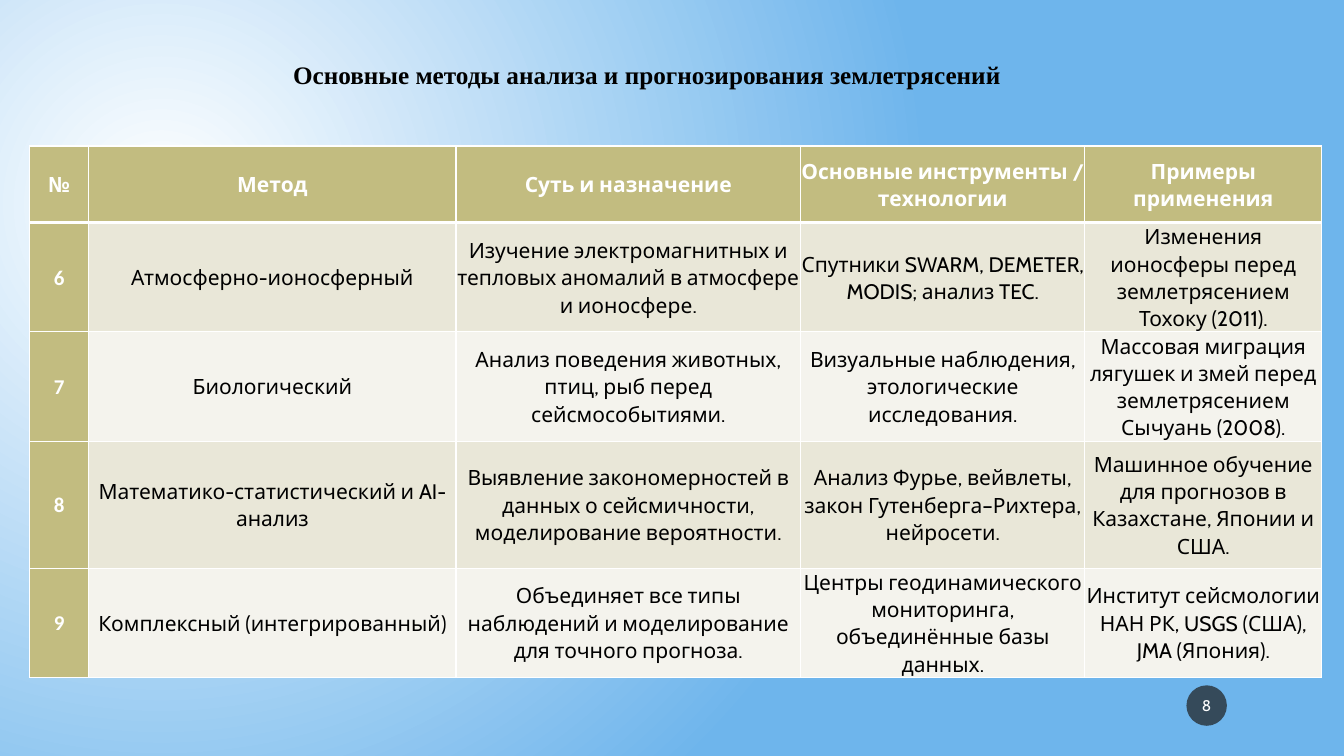
import lxml.etree
import pptx
import pptx.dml.color
import pptx.enum.shapes
import pptx.enum.text
import pptx.oxml
import pptx.oxml.ns
import pptx.util
from pptx.util import Cm

COLORS = {
    "white": "FFFFFF",
    "black": "000000",
    "sky": "6EB5EC",
    "olive": "C2BC80",
    "band_dark": "E9E7D8",
    "band_light": "F4F3ED",
    "badge": "1D1D1D",
}
qn = pptx.oxml.ns.qn


def rgb(name):
    return pptx.dml.color.RGBColor.from_string(COLORS[name])


def write_text(frame, text, font="Cabin", size=15, color="black", bold=False,
               line_spacing=1.07, space_after=0):
    frame.word_wrap = True
    paragraph = frame.paragraphs[0]
    paragraph.alignment = pptx.enum.text.PP_ALIGN.CENTER
    paragraph.line_spacing = line_spacing
    paragraph.space_after = pptx.util.Pt(space_after)
    run = paragraph.add_run()
    run.text = text
    run.font.name = font
    run.font.size = pptx.util.Pt(size)
    run.font.bold = bold
    run.font.color.rgb = rgb(color)


presentation = pptx.Presentation()
presentation.slide_width = Cm(33.87)
presentation.slide_height = Cm(19.05)
slide = presentation.slides.add_slide(presentation.slide_layouts[6])

# Background: radial gradient from white to sky blue
background = slide.background.fill
background.gradient()
for stop, color in zip(background.gradient_stops, ("white", "sky")):
    stop.color.rgb = rgb(color)
gradient = slide.background._cSld.find(".//" + qn("a:gradFill"))
gradient.remove(gradient.find(qn("a:lin")))
gradient_path = lxml.etree.SubElement(gradient, qn("a:path"), {"path": "circle"})
lxml.etree.SubElement(gradient_path, qn("a:fillToRect"),
                      {"l": "50000", "t": "55000", "r": "125000", "b": "100000"})

# Slide number badge
badge = slide.shapes.add_shape(pptx.enum.shapes.MSO_SHAPE.OVAL,
                               Cm(29.9), Cm(17.27), Cm(1.02), Cm(1.02))
badge.shadow.inherit = False
badge.line.fill.background()
badge.fill.solid()
badge.fill.fore_color.rgb = rgb("badge")
badge_color = badge.fill._xPr.find(".//" + qn("a:srgbClr"))
lxml.etree.SubElement(badge_color, qn("a:alpha"), {"val": "70000"})
badge.text_frame.margin_left = badge.text_frame.margin_right = Cm(0.05)
badge.text_frame.vertical_anchor = pptx.enum.text.MSO_ANCHOR.MIDDLE
write_text(badge.text_frame, "8", size=11, color="white", line_spacing=1.0)

# Table of methods
rows = [
    ("№", "Метод", "Суть и назначение", "Основные инструменты / технологии",
     "Примеры применения"),
    ("6", "Атмосферно-ионосферный",
     "Изучение электромагнитных и тепловых аномалий в атмосфере и ионосфере.",
     "Спутники SWARM, DEMETER, MODIS; анализ TEC.",
     "Изменения ионосферы перед землетрясением Тохоку (2011)."),
    ("7", "Биологический",
     "Анализ поведения животных, птиц, рыб перед сейсмособытиями.",
     "Визуальные наблюдения, этологические исследования.",
     "Массовая миграция лягушек и змей перед землетрясением Сычуань (2008)."),
    ("8", "Математико-статистический и AI-анализ",
     "Выявление закономерностей в данных о сейсмичности, моделирование вероятности.",
     "Анализ Фурье, вейвлеты, закон Гутенберга–Рихтера, нейросети.",
     "Машинное обучение для прогнозов в Казахстане, Японии и США."),
    ("9", "Комплексный (интегрированный)",
     "Объединяет все типы наблюдений и моделирование для точного прогноза.",
     "Центры геодинамического мониторинга, объединённые базы данных.",
     "Институт сейсмологии НАН РК, USGS (США), JMA (Япония)."),
]
column_widths = (1.5, 9.25, 8.69, 7.16, 5.97)
row_heights = (1.93, 1.93, 2.57, 3.2, 2.57)
table = slide.shapes.add_table(len(rows), len(column_widths), Cm(0.74), Cm(3.68),
                               Cm(sum(column_widths)), Cm(sum(row_heights))).table
table.horz_banding = False
for column, width in zip(table.columns, column_widths):
    column.width = Cm(width)
for row, height in zip(table.rows, row_heights):
    row.height = Cm(height)

for row_index, texts in enumerate(rows):
    for column_index, text in enumerate(texts):
        cell = table.cell(row_index, column_index)
        heading = row_index == 0 or column_index == 0
        band = "band_dark" if row_index % 2 else "band_light"
        cell.fill.solid()
        cell.fill.fore_color.rgb = rgb("olive" if heading else band)
        cell.margin_left = cell.margin_right = cell.margin_top = cell.margin_bottom = 0
        cell.vertical_anchor = pptx.enum.text.MSO_ANCHOR.MIDDLE
        write_text(cell.text_frame, text, bold=heading,
                   font="Calibri" if row_index and column_index == 0 else "Cabin",
                   color="white" if heading else "black")

        # White borders, thicker under the header row
        properties = cell._tc.get_or_add_tcPr()
        for position, side in enumerate("LRTB"):
            thick = (row_index, side) in ((0, "B"), (1, "T"))
            border = lxml.etree.Element(qn("a:ln" + side),
                                        {"w": str(pptx.util.Pt(3 if thick else 1))})
            border_fill = lxml.etree.SubElement(border, qn("a:solidFill"))
            lxml.etree.SubElement(border_fill, qn("a:srgbClr"), {"val": COLORS["white"]})
            properties.insert(position, border)

# Title
title = slide.shapes.add_textbox(Cm(4.14), Cm(1.32), Cm(24.33), Cm(1.09))
title.text_frame.auto_size = pptx.enum.text.MSO_AUTO_SIZE.SHAPE_TO_FIT_TEXT
write_text(title.text_frame, "Основные методы анализа и прогнозирования землетрясений",
           font="Times New Roman", size=18, bold=True, space_after=8)

presentation.save("out.pptx")
